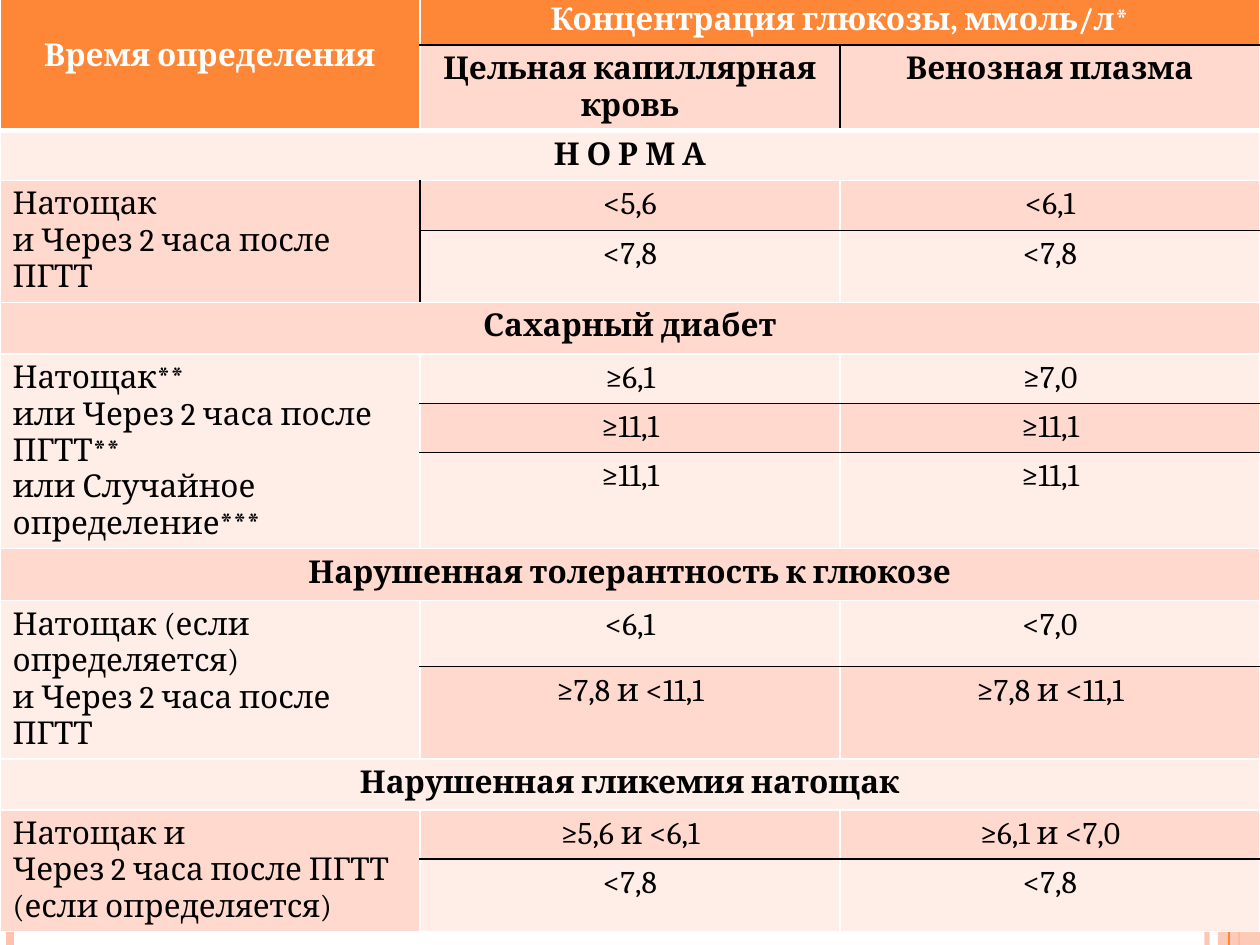
from lxml.etree import SubElement as Sub
from pptx import Presentation
from pptx.dml.color import RGBColor as RGB
from pptx.enum.shapes import MSO_CONNECTOR as Conn, MSO_SHAPE as Shape
from pptx.enum.text import PP_ALIGN as Align
from pptx.oxml.ns import qn
from pptx.util import Pt

PX = 914400 // 126
WIDE, HIGH = 1260, 945
ORANGE, SALMON = RGB(0xFE, 0x86, 0x37), RGB(0xFE, 0xC3, 0xAE)
DARK, LIGHT = RGB(0xFF, 0xD9, 0xCE), RGB(0xFF, 0xED, 0xE8)
WHITE, BLACK = RGB(255, 255, 255), RGB(0, 0, 0)

ROWS = [
    ("Время определения", "Концентрация глюкозы, ммоль/л*", ""),
    ("", "Цельная капиллярная кровь", "Венозная плазма"),
    ("Н О Р М А", "", ""),
    ("Натощак\nи Через 2 часа после ПГТТ", "<5,6", "<6,1"),
    ("", "<7,8", "<7,8"),
    ("Сахарный диабет", "", ""),
    ("Натощак**\nили Через 2 часа после ПГТТ**\nили Случайное определение***",
     "≥6,1", "≥7,0"),
    ("", "≥11,1", "≥11,1"),
    ("", "≥11,1", "≥11,1"),
    ("Нарушенная толерантность к глюкозе", "", ""),
    ("Натощак (если определяется)\nи Через 2 часа после ПГТТ", "<6,1", "<7,0"),
    ("", "≥7,8 и <11,1", "≥7,8 и <11,1"),
    ("Нарушенная гликемия натощак", "", ""),
    ("Натощак и\nЧерез 2 часа после ПГТТ (если определяется)",
     "≥5,6 и <6,1", "≥6,1 и <7,0"),
    ("", "<7,8", "<7,8"),
]
TALL = [49, 85, 50, 50, 72, 52, 49, 49, 96, 52, 66, 92, 51, 48, 73]
TITLES = [2, 5, 9, 12]
SPANS = [(0, 0, 1, 0), (0, 1, 0, 2), (3, 0, 4, 0), (6, 0, 8, 0),
         (10, 0, 11, 0), (13, 0, 14, 0)] + [(r, 0, r, 2) for r in TITLES]
SPLIT = {1, 4, 7, 8, 11, 14}         # rows with a black rule above
UPRIGHT = {(1, 2), (3, 1), (4, 1)}   # cells with a black rule at left


def fade(fill, part):
    color = fill._xPr.find(qn("a:solidFill"))[0]
    Sub(color, qn("a:alpha"), val=str(part * 1000))


def edge(cell, side, color, width):
    ln = Sub(cell._tc.get_or_add_tcPr(), qn("a:ln" + side), w=str(Pt(width)))
    Sub(Sub(ln, qn("a:solidFill")), qn("a:srgbClr"), val=str(color))


deck = Presentation()
deck.slide_width, deck.slide_height = WIDE * PX, HIGH * PX
slide = deck.slides.add_slide(deck.slide_layouts[6])
shapes = slide.shapes

# Side stripes, with the band below the last one
for x, color, width, part in [(1207, SALMON, 3, 93), (10, SALMON, 4.5, 100),
                              (1239, ORANGE, 1.5, 100), (1229, ORANGE, 0.75, 100)]:
    if x == 1229:
        band = shapes.add_shape(Shape.RECTANGLE, 1218 * PX, 0, 42 * PX, HIGH * PX)
        band.shadow.inherit = False
        band.fill.solid()
        band.fill.fore_color.rgb = SALMON
        fade(band.fill, 87)
        band.line.fill.background()
    line = shapes.add_connector(Conn.STRAIGHT, x * PX, 0, x * PX, HIGH * PX)
    line.line.color.rgb, line.line.width = color, Pt(width)
    if part < 100:
        fade(line.line.fill, part)
    Sub(line._element.spPr, qn("a:effectLst"))

# Table grid
frame = shapes.add_table(len(ROWS), 3, 0, -4 * PX, WIDE * PX, sum(TALL) * PX)
table = frame.table
table.first_row = table.horz_banding = False
for col in table.columns:
    col.width = 420 * PX
for row, tall in zip(table.rows, TALL):
    row.height = tall * PX
for top, left, end, right in SPANS:
    table.cell(top, left).merge(table.cell(end, right))

# Cells: borders, fill, text
for r, texts in enumerate(ROWS):
    for c, text in enumerate(texts):
        cell = table.cell(r, c)
        head = r == 0 or (r == 1 and c == 0)
        for side, dark, width in [
                ("L", (r, c) in UPRIGHT, 1),
                ("R", (r, c + 1) in UPRIGHT, 1),
                ("T", c and r in SPLIT, 3 if r == 2 else 1),
                ("B", c and r + 1 in SPLIT, 3 if r == 1 else 1)]:
            edge(cell, side, BLACK if dark else WHITE, width)
        cell.fill.solid()
        cell.fill.fore_color.rgb = ORANGE if head else DARK if r % 2 else LIGHT
        if not text:
            continue
        cell.text = text
        for par in cell.text_frame.paragraphs:
            font = par.font
            font.name, font.size = "Cambria", Pt(18)
            font.bold = r < 2 or r in TITLES
            font.color.rgb = WHITE if head else BLACK
            if c or font.bold:
                par.alignment = Align.CENTER

# The first heading sits one line lower
table.cell(0, 0).margin_top = 42 * PX

deck.save("out.pptx")
